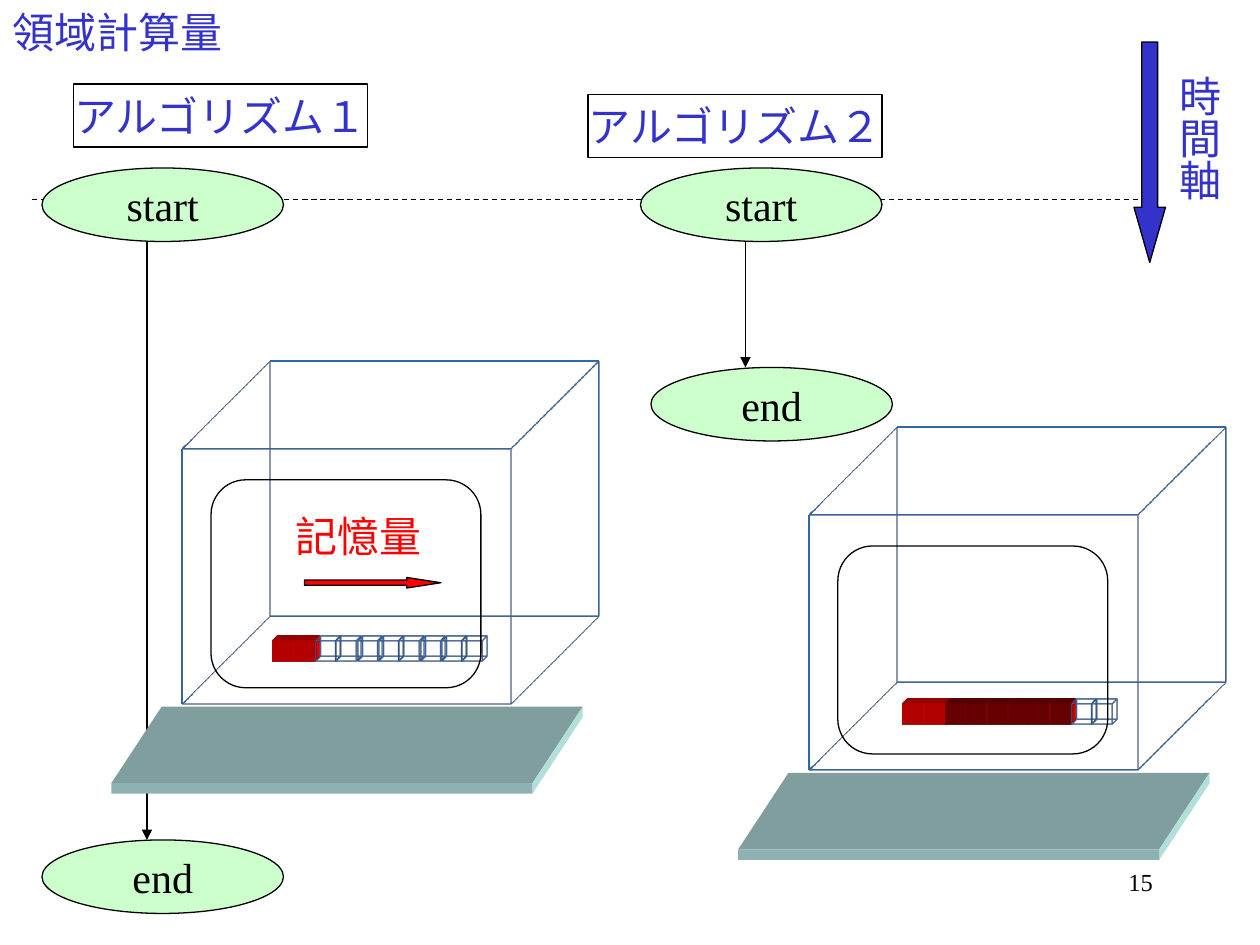
from dataclasses import dataclass
from lxml.etree import SubElement
from pptx import Presentation
from pptx.dml.color import RGBColor
from pptx.enum.dml import MSO_LINE
from pptx.enum.shapes import MSO_CONNECTOR, MSO_SHAPE
from pptx.enum.text import MSO_ANCHOR, PP_ALIGN
from pptx.oxml.ns import qn
from pptx.util import Inches, Pt


@dataclass(frozen=True)
class Theme:
    font: str = "Times New Roman"
    size: int = 24
    small: int = 14
    ink: str = "000000"
    blue: str = "3333CC"
    red: str = "FF0000"
    green: str = "CCFFCC"
    case: str = "EAEAEA"
    free: str = "B2B2B2"
    top: str = "7F9E9D"
    front: str = "8EB2B1"
    side: str = "B2DEDC"
    line: float = 0.75


T = Theme()
COLS, ROWS = 120, 90
deck = Presentation()
deck.slide_width, deck.slide_height = Inches(10), Inches(7.5)
slide = deck.slides.add_slide(deck.slide_layouts[6])
shapes = slide.shapes


def col(n):
    return round(deck.slide_width * n / COLS)


def row(n):
    return round(deck.slide_height * n / ROWS)


def place(box):
    x, y, w, h = box
    return col(x), row(y), col(w), row(h)


# Basic parts
def paint(shape, fill=None, line=None):
    shape.shadow.inherit = False
    if fill:
        shape.fill.solid()
        shape.fill.fore_color.rgb = RGBColor.from_string(fill)
    else:
        shape.fill.background()
    if line:
        shape.line.color.rgb = RGBColor.from_string(line)
        shape.line.width = Pt(T.line)
    else:
        shape.line.fill.background()
    return shape


def form(kind, box, fill=None, line=None):
    return paint(shapes.add_shape(kind, *place(box)), fill, line)


def poly(points, fill):
    ends = [(col(x), row(y)) for x, y in points]
    build = shapes.build_freeform(*ends[0], scale=1)
    build.add_line_segments(ends[1:], close=True)
    return paint(build.convert_to_shape(), fill)


def rule(start, end, arrow=False):
    line = shapes.add_connector(MSO_CONNECTOR.STRAIGHT, col(start[0]),
                                row(start[1]), col(end[0]), row(end[1]))
    line.line.color.rgb = RGBColor.from_string(T.ink)
    line.line.width = Pt(T.line)
    if arrow:
        SubElement(line.line._get_or_add_ln(), qn("a:tailEnd"), type="triangle")
    SubElement(line._element.spPr, qn("a:effectLst"))
    return line


def write(shape, text, color, align=PP_ALIGN.LEFT, size=T.size):
    frame = shape.text_frame
    frame.text = text
    frame.word_wrap = False
    para = frame.paragraphs[0]
    para.alignment = align
    font = para.runs[0].font
    font.name, font.size = T.font, Pt(size)
    font.color.rgb = RGBColor.from_string(color)
    return frame


def note(box, text, color=T.blue, **style):
    return write(shapes.add_textbox(*place(box)), text, color, **style)


def label(kind, box, text, color, fill=None):
    frame = write(form(kind, box, fill, T.ink), text, color, PP_ALIGN.CENTER)
    frame.vertical_anchor = MSO_ANCHOR.MIDDLE


# Rectangle drawn out to the upper right, solid or as wires
def block(box, depth, fill, wire=False, rig="legacyFlat3"):
    props = form(MSO_SHAPE.RECTANGLE, box, fill)._element.spPr
    scene = SubElement(props, qn("a:scene3d"))
    SubElement(scene, qn("a:camera"), prst="legacyObliqueTopRight")
    SubElement(scene, qn("a:lightRig"), rig=rig, dir="b")
    solid = SubElement(props, qn("a:sp3d"), extrusionH=str(col(depth)),
                       prstMaterial="legacyWireframe" if wire else "legacyMatte")
    tint = SubElement(solid, qn("a:extrusionClr"))
    SubElement(tint, qn("a:srgbClr"), val=fill)


# Row of memory cells: used, then extra, then free
def memory(box, used, extra, count=10, depth=1.35):
    x, y, w, h = box
    step = w / count
    for i in range(count):
        cell = (x + i * step, y, step, h)
        if i < used:
            block(cell, depth, T.red)
        elif i < used + extra:
            block(cell, depth, T.red, rig="legacyNormal3")
        else:
            block(cell, depth, T.free, wire=True)


# Keyboard as a slanted slab
def keys(box, slant=4.8, thick=1):
    x, y, w, h = box
    right, low = x + w, y + h
    edge = right - slant
    poly([(x + slant, y), (right, y), (edge, low - thick), (x, low - thick)],
         T.top)
    poly([(edge, low - thick), (right, y), (right, y + thick), (edge, low)],
         T.side)
    form(MSO_SHAPE.RECTANGLE, (x, low - thick, w - slant, thick), T.front)


# Computer: keyboard, monitor, memory and screen
def computer(box, cells, used, extra=0):
    x, y, w, h = box
    keys((x - 6.7, y + h + 0.2, w + 13.5, 8.3))
    block(box, 23.7, T.case, wire=True)
    memory(cells, used, extra)
    form(MSO_SHAPE.ROUNDED_RECTANGLE, (x + 2.8, y + 3, 25.7, 19.8), line=T.ink)


# Title plate and run of one algorithm
def flow(title, text, start, end):
    label(MSO_SHAPE.RECTANGLE, (*title, 28, 6), text, T.blue)
    w, h = 23, 7
    for spot, word in ((start, "start"), (end, "end")):
        label(MSO_SHAPE.OVAL, (*spot, w, h), word, T.ink, T.green)
    x = start[0] + 10
    rule((x, start[1] + h), (x, end[1]), arrow=True)


# Downward time axis
def clock(box):
    x, y, w, h = box
    arrow = form(MSO_SHAPE.DOWN_ARROW, (x, y, 3, h), T.blue, T.ink)
    arrow.adjustments[0], arrow.adjustments[1] = 0.5, 1.75
    frame = note((x + 2, y + 2, w - 2, 13.2), "時間軸")
    frame._txBody.bodyPr.set("vert", "eaVert")


# Caption and arrow for memory use
def usage(box):
    x, y, w, h = box
    arrow = form(MSO_SHAPE.RIGHT_ARROW, (x + 2, y + h - 1, 13, 1), T.red, T.ink)
    arrow.adjustments[0], arrow.adjustments[1] = 0.5, 3.25
    note((x, y, w, 6), "記憶量", T.red)


def main():
    note((86, 82, 25, 6), "15", T.ink, align=PP_ALIGN.RIGHT, size=T.small)
    rule((3, 19), (109, 19)).line.dash_style = MSO_LINE.DASH
    computer((77, 49, 31.4, 24.4), (86, 67, 20, 2), used=2, extra=6)
    flow((7, 8), "アルゴリズム１", (4, 16), (4, 80))
    flow((56, 9), "アルゴリズム２", (61, 16), (62, 35))
    note((0, 0, 22.4, 6), "領域計算量")
    clock((108, 4, 9.2, 21))
    computer((17.3, 42.7, 31.4, 24.4), (26, 61, 20, 2), used=2)
    usage((27, 48, 15, 8))
    deck.save("out.pptx")


if __name__ == "__main__":
    main()
